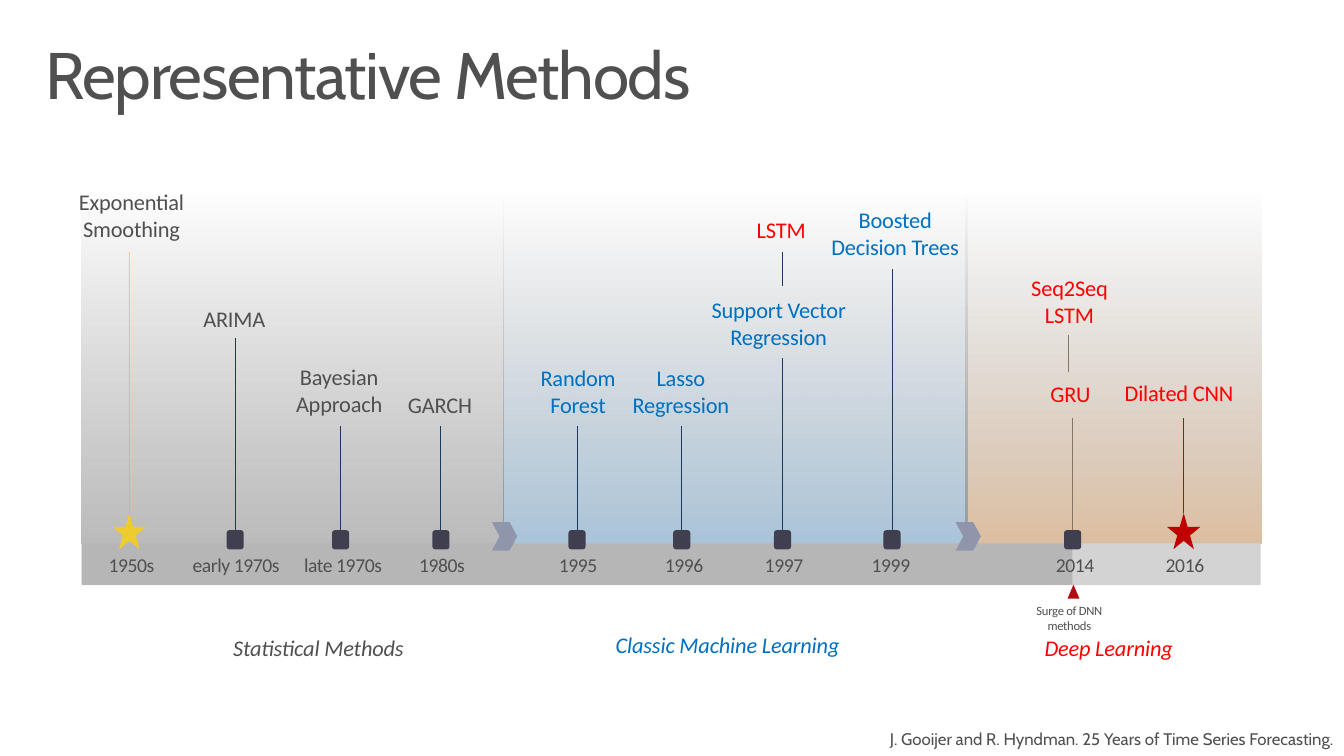
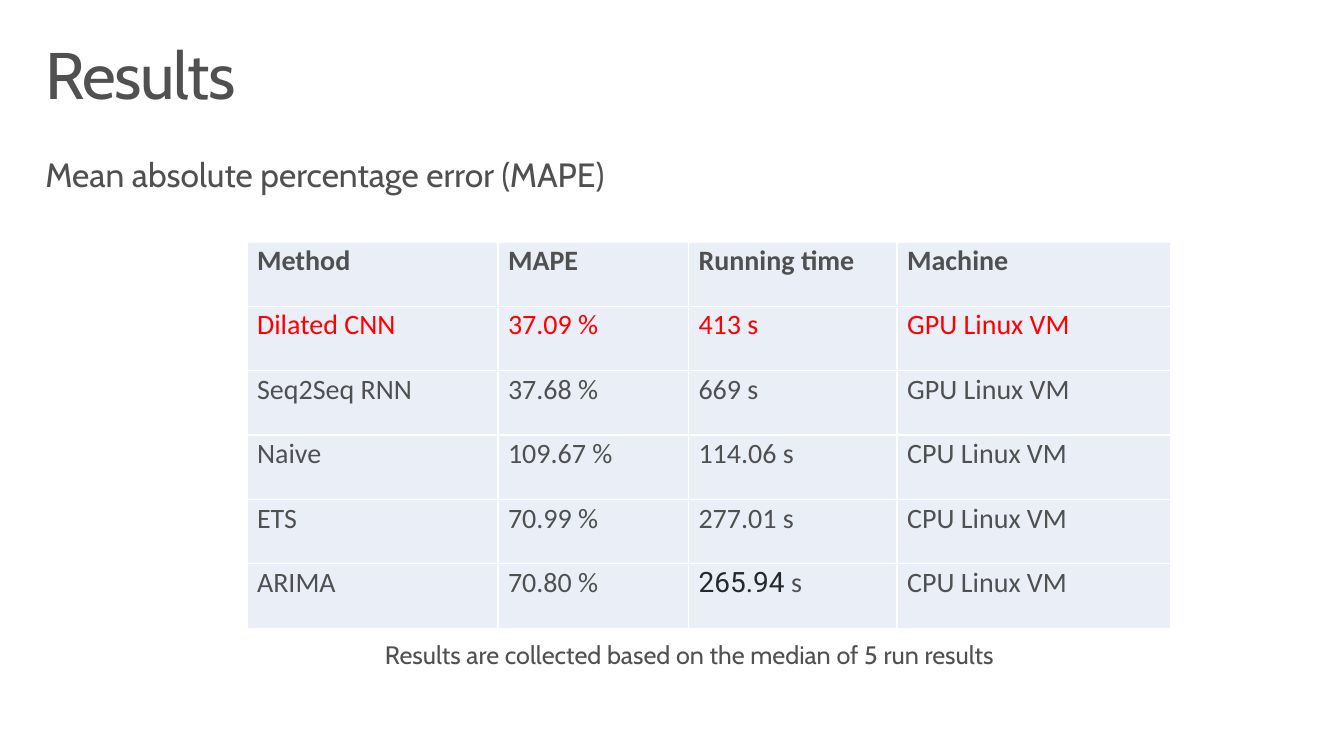
from dataclasses import dataclass

from lxml.etree import SubElement
from pptx import Presentation
from pptx.dml.color import RGBColor
from pptx.enum.shapes import MSO_CONNECTOR, MSO_SHAPE
from pptx.enum.text import MSO_ANCHOR, MSO_AUTO_SIZE, PP_ALIGN
from pptx.oxml.ns import qn
from pptx.util import Pt


@dataclass(frozen=True)
class Theme:
    # Fonts
    head: str = "Cabin"
    body: str = "Calibri"
    code: str = "Roboto"
    # Colours
    ink: str = "505050"
    blue: str = "0070C0"
    red: str = "FF0000"
    gray: str = "737373"
    sky: str = "3892DA"
    clay: str = "E4801C"
    base: str = "D4D3D3"
    node: str = "403F50"
    arrow: str = "8F96AB"
    gold: str = "EECC2D"
    wine: str = "C00000"
    mark: str = "B20E12"
    navy: str = "1C385D"
    earth: str = "877563"
    amber: str = "F3A447"
    cell: str = "EAEFF7"
    white: str = "FFFFFF"
    slate: str = "24292E"
    # Type sizes
    title: float = 47
    lead: float = 24
    table: float = 20
    note: float = 18
    label: float = 16
    year: float = 14
    cite: float = 12
    tiny: float = 9


T = Theme()

# Timeline: left and right edge, band top, axis top
LEFT, RIGHT, TOP, AXIS = 58.3, 900.6, 134.2, 388.1

# Era bands: left, right, colour
BANDS = [
    (689.8, 900.8, T.clay),
    (360, 691.2, T.sky),
    (LEFT, 360, T.gray),
]

# Milestones: marker centre, year, year centre, stem top, stem colour
STEPS = [
    (92.4, "1950s", 93.9, 180, T.amber),
    (168, "early 1970s", 168.6, 241.2, T.navy),
    (243.3, "late 1970s", 245, 304.6, T.navy),
    (315, "1980s", 315.7, 304.6, T.navy),
    (412.2, "1995", 412.9, 304.6, T.navy),
    (487, "1996", 488.6, 304.6, T.navy),
    (559, "1997", 560, 255.6, T.navy),
    (637.2, "1999", 636.4, 192.2, T.navy),
    (766.2, "2014", 767.9, 298.8, T.earth),
    (845.5, "2016", 846.4, 298.8, T.mark),
]
STARS = {"1950s": T.gold, "2016": T.wine}

# Methods: text, centre x, centre y, width, colour
LABELS = [
    ("Exponential\nSmoothing", 94, 153.7, 77, T.ink),
    ("ARIMA", 167.4, 227.2, 77, T.ink),
    ("Bayesian\nApproach", 242.3, 278.3, 77, T.ink),
    ("GARCH", 314.3, 289.1, 77, T.ink),
    ("Random Forest", 412.9, 279, 77, T.blue),
    ("Lasso\nRegression", 486.4, 279, 77, T.blue),
    ("LSTM", 558, 163.8, 85, T.red),
    ("Support Vector Regression", 556.2, 230.8, 108.7, T.blue),
    ("Boosted Decision Trees", 639.4, 166.3, 92.2, T.blue),
    ("Seq2Seq LSTM", 763.9, 214.9, 85, T.red),
    ("GRU", 764.6, 281.2, 85, T.red),
    ("Dilated CNN", 842.2, 280.4, 85, T.red),
]

# Era names: text, centre x, centre y, colour
ERAS = [
    ("Statistical Methods", 227.5, 462.6, T.ink),
    ("Classic Machine Learning", 519.8, 460.4, T.blue),
    ("Deep Learning", 792, 462.6, T.red),
]

ROWS = [
    ("Method", "MAPE", "Running time", "Machine"),
    ("Dilated CNN", "37.09 %", "413 s", "GPU Linux VM"),
    ("Seq2Seq RNN", "37.68 %", "669 s", "GPU Linux VM"),
    ("Naive", "109.67 %", "114.06 s", "CPU Linux VM"),
    ("ETS", "70.99 %", "277.01 s", "CPU Linux VM"),
    ("ARIMA", "70.80 %", "265.94 s", "CPU Linux VM"),
]
COLS = [179.3, 136.1, 149, 195.1]


def rgb(tone):
    return RGBColor.from_string(tone)


def style(frame, size, tone=T.ink, font=T.body, bold=False, ital=False,
          track=0, align=PP_ALIGN.LEFT, lead=None):
    for para in frame.paragraphs:
        para.alignment = align
        if lead:
            para.line_spacing = lead
        for run in para.runs:
            run.font.name = font
            run.font.size = Pt(size)
            run.font.color.rgb = rgb(tone)
            run.font.bold = bold
            run.font.italic = ital
            if track:
                run.font._element.set("spc", str(round(track * 100)))


def inset(frame, side, edge):
    frame.margin_left = frame.margin_right = Pt(side)
    frame.margin_top = frame.margin_bottom = Pt(edge)


def text(slide, words, x, y, w, h, size, side=0, edge=0,
         anchor=MSO_ANCHOR.TOP, **look):
    box = slide.shapes.add_textbox(Pt(x), Pt(y), Pt(w), Pt(h))
    frame = box.text_frame
    frame.word_wrap = True
    frame.vertical_anchor = anchor
    inset(frame, side, edge)
    frame.text = words
    style(frame, size, **look)


def label(slide, words, x, y, w, size, **look):
    """Text centred on the point x, y."""
    text(slide, words, x - w / 2, y - 9, w, 18, size,
         anchor=MSO_ANCHOR.MIDDLE, align=PP_ALIGN.CENTER, **look)


def fade(item, *parts):
    """Set the opacity, in percent, of each colour in turn."""
    tones = list(item.element.spPr.iter(qn("a:srgbClr")))
    for tone, part in zip(tones, parts):
        SubElement(tone, qn("a:alpha"), val=str(part * 1000))


def shape(slide, kind, x, y, w, h, tone):
    item = slide.shapes.add_shape(kind, Pt(x), Pt(y), Pt(w), Pt(h))
    item.shadow.inherit = False
    item.line.fill.background()
    item.fill.solid()
    item.fill.fore_color.rgb = rgb(tone)
    return item


def band(slide, left, right, tone):
    """Era panel that fades in downwards, darkened by its own shadow."""
    item = shape(slide, MSO_SHAPE.RECTANGLE, left, TOP, right - left,
                 AXIS - TOP, tone)
    item.fill.gradient()
    item.fill.gradient_angle = 270
    for stop, hue in zip(item.fill.gradient_stops, (T.gray, tone)):
        stop.color.rgb = rgb(hue)
    fade(item, 0, 30)
    glow = SubElement(item.element.spPr.find(qn("a:effectLst")),
                      qn("a:outerShdw"), blurRad="0", dist="0")
    black = SubElement(glow, qn("a:srgbClr"), val="000000")
    SubElement(black, qn("a:alpha"), val="50000")


def stem(slide, x, top, end, tone):
    line = slide.shapes.add_connector(
        MSO_CONNECTOR.STRAIGHT, Pt(x), Pt(top), Pt(x), Pt(end))
    line.line.width = Pt(0.75)
    line.line.color.rgb = rgb(tone)
    SubElement(line.element.spPr, qn("a:effectLst"))
    return line


def step(slide, x, year, mid, top, tone):
    """Marker on the axis with its stem and year."""
    if year in STARS:
        node = shape(slide, MSO_SHAPE.STAR_5_POINT, x - 11.9, 366.5,
                     23.8, 25.9, STARS[year])
    else:
        node = shape(slide, MSO_SHAPE.ROUNDED_RECTANGLE, x - 6.1, 378.7,
                     12.2, 13.7, T.node)
    line = stem(slide, x, top, 378.7, tone)
    line.end_connect(node, 0)
    if tone == T.amber:
        fade(line, 50)
    label(slide, year, mid, 403, 90, T.year, track=-0.3)


def start(deck, words):
    """Slide with the shared title."""
    slide = deck.slides.add_slide(deck.slide_layouts[5])
    title = slide.shapes.title
    title.left, title.top = Pt(20.9), Pt(23)
    title.width, title.height = Pt(918), Pt(70.6)
    frame = title.text_frame
    frame.text = words
    frame.word_wrap = True
    frame.auto_size = MSO_AUTO_SIZE.NONE
    frame.vertical_anchor = MSO_ANCHOR.TOP
    inset(frame, 11.5, 7.2)
    style(frame, T.title, font=T.head, track=-1, lead=0.9)
    return slide


def methods(deck):
    slide = start(deck, "Representative Methods")
    text(slide, "J. Gooijer and R. Hyndman. 25 Years of Time Series Forecasting.",
         506, 517, 454, 21.6, T.cite, side=7.2, edge=3.6, font=T.head,
         align=PP_ALIGN.RIGHT)

    # Era bands and axis
    for row in BANDS:
        band(slide, *row)
    shape(slide, MSO_SHAPE.RECTANGLE, LEFT, AXIS, RIGHT - LEFT, 30, T.base)
    past = shape(slide, MSO_SHAPE.RECTANGLE, LEFT, AXIS, 707.8, 29.7, T.gray)
    fade(past, 30)

    # Milestones
    for row in STEPS:
        step(slide, *row)
    for x, top, end, tone in [(558.7, 180, 204.5, T.navy),
                              (763.2, 239, 265.7, T.earth)]:
        stem(slide, x, top, end, tone)
    for x in (351.4, 682.6):
        turn = shape(slide, MSO_SHAPE.CHEVRON, x, 373, 18, 20.2, T.arrow)
        turn.adjustments[0] = 0.3

    # Names of methods and eras
    for words, x, y, w, tone in LABELS:
        label(slide, words, x, y, w, T.label, tone=tone, track=-0.1)
    for words, x, y, tone in ERAS:
        label(slide, words, x, y, 186, T.label, tone=tone, ital=True,
              track=-0.1)

    # Turning point
    shape(slide, MSO_SHAPE.ISOSCELES_TRIANGLE, 762.5, 417.6, 8.6, 10, T.mark)
    label(slide, "Surge of DNN\nmethods", 763.8, 441.4, 60, T.tiny,
          track=-0.2)


def edges(cell):
    """White rule on all four sides of a cell."""
    props = cell._tc.get_or_add_tcPr()
    for spot, side in enumerate(("a:lnL", "a:lnR", "a:lnT", "a:lnB")):
        line = SubElement(props, qn(side), w=str(Pt(1)))
        fill = SubElement(line, qn("a:solidFill"))
        SubElement(fill, qn("a:srgbClr"), val=T.white)
        props.insert(spot, line)


def grid(slide, x, y, high):
    table = slide.shapes.add_table(
        len(ROWS), len(COLS), Pt(x), Pt(y), Pt(sum(COLS)),
        Pt(high * len(ROWS))).table
    table.first_row = table.horz_banding = False
    for col, wide in zip(table.columns, COLS):
        col.width = Pt(wide)
    for r, row in enumerate(ROWS):
        table.rows[r].height = Pt(high)
        for c, words in enumerate(row):
            cell = table.cell(r, c)
            inset(cell, 7.2, 1.44)
            cell.fill.solid()
            cell.fill.fore_color.rgb = rgb(T.cell)
            edges(cell)
            cell.text_frame.text = words
            style(cell.text_frame, T.table, bold=r == 0,
                  tone=T.red if r == 1 else T.ink)
    return table


def results(deck):
    slide = start(deck, "Results")
    text(slide, "Mean absolute percentage error (MAPE)", 20.9, 105.8, 939, 50,
         T.lead, side=11.5, edge=7.2, font=T.head, lead=0.9)
    table = grid(slide, 176.4, 172.8, 46)

    # The last time has its figure in another face
    frame = table.cell(5, 2).text_frame
    para = frame.paragraphs[0]
    para.runs[0].text = "265.94"
    style(frame, T.table, tone=T.slate, font=T.code)
    unit = para.add_run()
    unit.text = " s"
    unit.font.name, unit.font.size = T.body, Pt(T.table)
    unit.font.color.rgb = rgb(T.ink)

    text(slide, "Results are collected based on the median of 5 run results",
         267.8, 452.9, 475, 28.8, T.note, side=7.2, edge=3.6, font=T.head)


def main():
    deck = Presentation()
    deck.slide_width, deck.slide_height = Pt(960), Pt(540)
    methods(deck)
    results(deck)
    deck.save("out.pptx")


if __name__ == "__main__":
    main()
